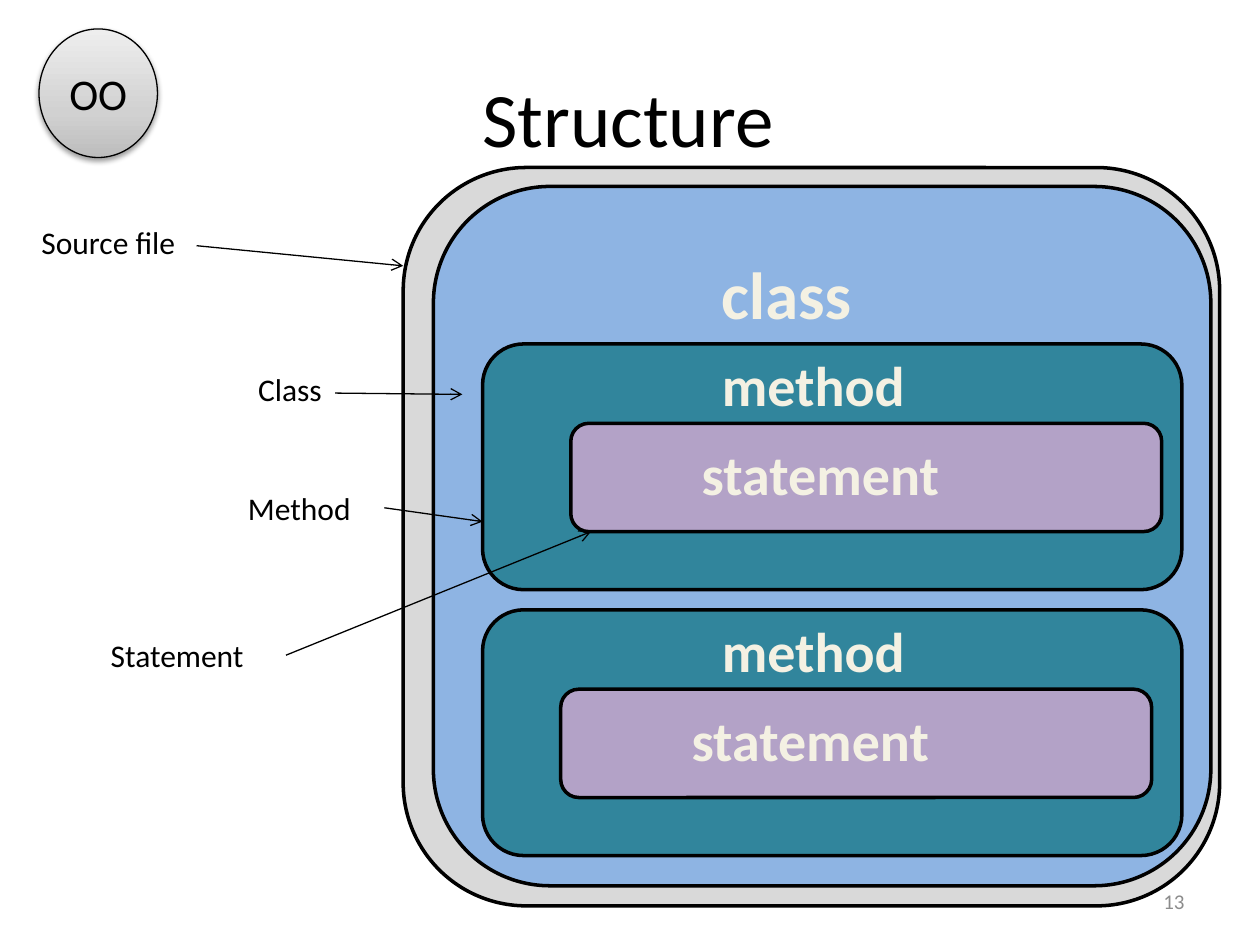
from dataclasses import dataclass
from pptx import Presentation, util as u
from pptx.dml.color import RGBColor
from pptx.enum import shapes, text
from pptx.oxml import parse_xml
from pptx.oxml.ns import nsdecls

COLS, ROWS = 100, 75


@dataclass(frozen=True)
class Theme:
    font: str = "Calibri"
    ink: str = "000000"
    cream: str = "F4F1E3"
    muted: str = "8C8C8C"
    file: str = "D9D9D9"
    group: str = "8EB4E3"
    method: str = "31859C"
    state: str = "B3A2C7"
    shade: tuple = ((0, "BDBDBD"), (35, "D1D1D1"), (100, "EEEEEE"))
    head: int = 44
    big: int = 38
    mid: int = 32
    badge: int = 25
    label: int = 18
    small: int = 12
    thick: float = 2
    thin: float = 0.75


def rgb(code):
    return RGBColor.from_string(code)


def xml(tag, inner="", attrs=""):
    return parse_xml(f'<a:{tag} {nsdecls("a")} {attrs}>{inner}</a:{tag}>')


def write(shape, words, font, size, color, bold=False,
          align=text.PP_ALIGN.LEFT, anchor=text.MSO_ANCHOR.TOP):
    frame = shape.text_frame
    frame.word_wrap = True
    frame.vertical_anchor = anchor
    para = frame.paragraphs[0]
    para.alignment = align
    run = para.add_run()
    run.text = words
    run.font.name = font
    run.font.size = u.Pt(size)
    run.font.bold = bold
    run.font.color.rgb = rgb(color)


class Board:
    def __init__(self, deck, theme):
        self.theme = theme
        self.col = deck.slide_width / COLS
        self.row = deck.slide_height / ROWS
        self.slide = deck.slides.add_slide(deck.slide_layouts[5])

    def place(self, x, y, w=0, h=0):
        return [u.Emu(round(n * unit)) for n, unit in
                zip((x, y, w, h), (self.col, self.row) * 2)]

    def title(self, words, *area):
        shape = self.slide.shapes.title
        shape.left, shape.top, shape.width, shape.height = self.place(*area)
        write(shape, words, self.theme.font, self.theme.head, self.theme.ink,
              align=text.PP_ALIGN.CENTER, anchor=text.MSO_ANCHOR.MIDDLE)

    def label(self, words, *area, size=None, color=None, **style):
        shape = self.slide.shapes.add_textbox(*self.place(*area))
        write(shape, words, self.theme.font, size or self.theme.label,
              color or self.theme.ink, **style)

    def shape(self, kind, area, width):
        shape = self.slide.shapes.add_shape(kind, *self.place(*area))
        shape.shadow.inherit = False
        shape.line.color.rgb = rgb(self.theme.ink)
        shape.line.width = u.Pt(width)
        return shape

    def box(self, fill, *area):
        shape = self.shape(shapes.MSO_SHAPE.ROUNDED_RECTANGLE, area,
                           self.theme.thick)
        shape.fill.solid()
        shape.fill.fore_color.rgb = rgb(fill)

    def badge(self, words, *area):
        shape = self.shape(shapes.MSO_SHAPE.OVAL, area, self.theme.thin)
        shape.fill.gradient()
        shape.fill.gradient_angle = 90
        stops = "".join(
            f'<a:gs pos="{at * 1000}"><a:srgbClr val="{code}"/></a:gs>'
            for at, code in self.theme.shade)
        props = shape._element.spPr
        old = props.find(".//{*}gsLst")
        old.getparent().replace(old, xml("gsLst", stops))
        props.find("{*}effectLst").append(xml(
            "outerShdw",
            f'<a:srgbClr val="{self.theme.ink}"><a:alpha val="38000"/></a:srgbClr>',
            f'blurRad="{u.Pt(3.1)}" dist="{u.Pt(1.6)}" dir="5400000" rotWithShape="0"'))
        write(shape, words, self.theme.font, self.theme.badge, self.theme.ink,
              align=text.PP_ALIGN.CENTER, anchor=text.MSO_ANCHOR.MIDDLE)

    def arrow(self, start, end):
        line = self.slide.shapes.add_connector(
            shapes.MSO_CONNECTOR.STRAIGHT,
            *self.place(*start)[:2], *self.place(*end)[:2])
        line.line.color.rgb = rgb(self.theme.ink)
        line.line.width = u.Pt(self.theme.thin)
        line.line._get_or_add_ln().append(xml("tailEnd", attrs='type="arrow"'))
        line._element.spPr.append(xml("effectLst"))

    def method(self, top, left):
        look = dict(size=self.theme.mid, color=self.theme.cream, bold=True)
        self.box(self.theme.method, 38.3, top, 55.5, 19.5)
        self.label("method", 56.3, top, 21.9, 6.4, **look)
        self.box(self.theme.state, left, top + 6.3, 46.9, 8.6)
        self.label("statement", left + 9.4, top + 7.1, 23.4, 6.4, **look)


def main():
    deck = Presentation()
    deck.slide_width, deck.slide_height = u.Inches(10), u.Inches(7.5)
    theme = Theme()
    board = Board(deck, theme)

    board.title("Structure", 4.7, 3, 90.3, 12.5)
    board.badge("OO", 3.1, 2.3, 9.4, 10.2)
    board.box(theme.file, 32, 13.3, 64.8, 58.6)
    board.box(theme.group, 34.4, 14.8, 61.7, 55.5)
    board.label("class", 41, 19.6, 42.8, 7.5, size=theme.big,
                color=theme.cream, bold=True, align=text.PP_ALIGN.CENTER)
    for top, left in ((27.3, 45.3), (48.4, 44.5)):
        board.method(top, left)

    notes = (
        ("Source file", (2.3, 17.2, 28.1), (15.6, 19.5), (32, 21.1)),
        ("Class", (19.5, 28.9, 7.8), (26.6, 31.2), (36.7, 31.3)),
        ("Method", (18.7, 38.3, 11.7), (30.5, 40.3), (38.3, 41.4)),
        ("Statement", (7.8, 50, 14.8), (22.7, 52), (46.9, 42.2)),
    )
    for words, area, start, end in notes:
        board.label(words, *area, 4)
        board.arrow(start, end)

    board.label("13", 71.7, 69.5, 23.3, 4, size=theme.small, color=theme.muted,
                align=text.PP_ALIGN.RIGHT, anchor=text.MSO_ANCHOR.MIDDLE)
    deck.save("out.pptx")


if __name__ == "__main__":
    main()
